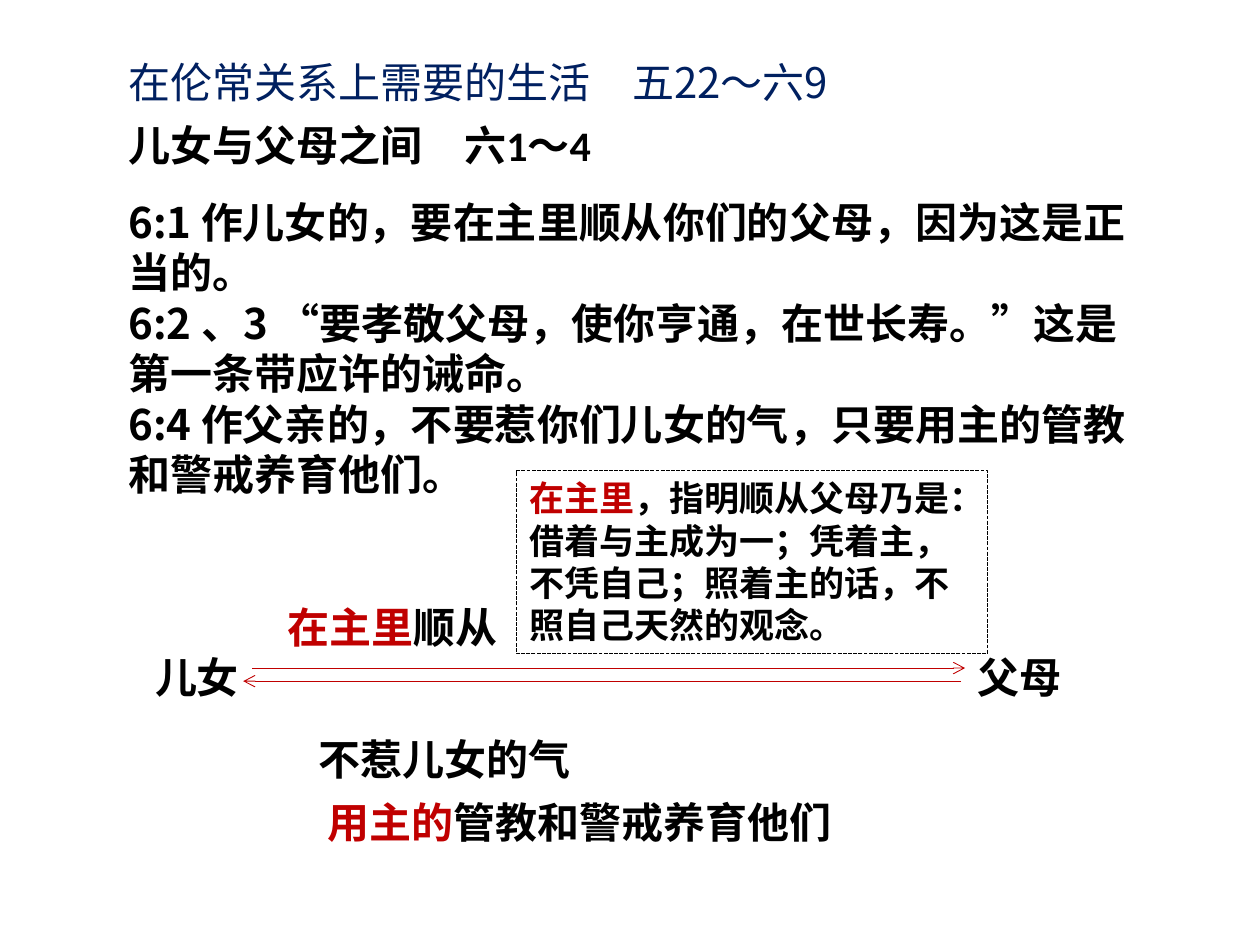
import pptx
import pptx.util
import pptx.dml.color
import pptx.enum.dml
import pptx.enum.shapes
import pptx.enum.text
import pptx.oxml.ns
from lxml import etree

Pt = pptx.util.Pt
qn = pptx.oxml.ns.qn
NAVY = pptx.dml.color.RGBColor(0x00, 0x20, 0x60)
BLACK = pptx.dml.color.RGBColor(0x00, 0x00, 0x00)
RED = pptx.dml.color.RGBColor(0xC0, 0x00, 0x00)
CJK = "Noto Sans CJK SC"


class LessonSlide:
    """Holds the text style and the slide being built."""

    def __init__(self, slide):
        self.slide = slide
        self.style = {"size": Pt(24), "bold": True, "name": CJK}

    def fill_text(self, frame, paragraphs, wrap=True, **changes):
        """Each paragraph is a list of (text, colour) runs."""
        layout = {
            "word_wrap": wrap,
            "auto_size": pptx.enum.text.MSO_AUTO_SIZE.SHAPE_TO_FIT_TEXT,
        }
        for attribute, value in layout.items():
            setattr(frame, attribute, value)
        for index, runs in enumerate(paragraphs):
            line = frame.add_paragraph() if index else frame.paragraphs[0]
            line.alignment = pptx.enum.text.PP_ALIGN.LEFT
            for words, colour in runs:
                run = line.add_run()
                run.text = words
                run.font.color.rgb = colour
                for attribute, value in {**self.style, **changes}.items():
                    setattr(run.font, attribute, value)
                east_asian = etree.SubElement(run.font._element, qn("a:ea"))
                east_asian.set("typeface", CJK)

    def text(self, left, top, width, height, paragraphs, wrap=True, **changes):
        box = self.slide.shapes.add_textbox(Pt(left), Pt(top), Pt(width), Pt(height))
        self.fill_text(box.text_frame, paragraphs, wrap, **changes)

    def arrow(self, start, end, y):
        connector = self.slide.shapes.add_connector(
            pptx.enum.shapes.MSO_CONNECTOR.STRAIGHT, Pt(start), Pt(y), Pt(end), Pt(y))
        connector.line.color.rgb = RED
        connector.line.width = Pt(0.5)
        etree.SubElement(connector.line._get_or_add_ln(), qn("a:tailEnd")).set("type", "arrow")
        etree.SubElement(connector._element.spPr, qn("a:effectLst"))

    def dashed_box(self, left, top, width, height, paragraphs, **changes):
        box = self.slide.shapes.add_shape(
            pptx.enum.shapes.MSO_SHAPE.RECTANGLE, Pt(left), Pt(top), Pt(width), Pt(height))
        box.shadow.inherit = False
        box.fill.background()
        box.line.color.rgb = BLACK
        outline = {"width": Pt(0.75), "dash_style": pptx.enum.dml.MSO_LINE.SQUARE_DOT}
        for attribute, value in outline.items():
            setattr(box.line, attribute, value)
        box.text_frame.vertical_anchor = pptx.enum.text.MSO_ANCHOR.TOP
        self.fill_text(box.text_frame, paragraphs, **changes)


def main():
    deck = pptx.Presentation()
    deck.slide_width, deck.slide_height = Pt(720), Pt(540)
    lesson = LessonSlide(deck.slides.add_slide(deck.slide_layouts[6]))
    margin, row = 66.25, 36

    # Headings
    lesson.text(margin, 29, 508, row, [[("在伦常关系上需要的生活　五22～六9", NAVY)]], bold=False)
    lesson.text(margin, 65, 409, row, [[("儿女与父母之间　六1～4", BLACK)]], name="Calibri")

    # Verses
    verses = [
        "6:1 作儿女的，要在主里顺从你们的父母，因为这是正当的。",
        "6:2 、3 “要孝敬父母，使你亨通，在世长寿。”这是第一条带应许的诫命。",
        "6:4 作父亲的，不要惹你们儿女的气，只要用主的管教和警戒养育他们。",
    ]
    lesson.text(margin, 108.75, 587, 181.5, [[(verse, BLACK)] for verse in verses])

    # Children and parents, with the duty of each side
    diagram_labels = [
        (81.5, 368.5, 62.5, [("儿女", BLACK)]),
        (551.5, 368.5, 62.5, [("父母", BLACK)]),
        (157, 340, 134.5, [("在主里", RED), ("顺从", BLACK)]),
        (175, 415.5, 159, [("不惹儿女的气", BLACK)]),
        (180, 451.5, 304, [("用主的", RED), ("管教和警戒养育他们", BLACK)]),
    ]
    for left, top, width, runs in diagram_labels:
        lesson.text(left, top, width, row, [runs], wrap=False)
    lesson.arrow(144, 551.5, 381.75)
    lesson.arrow(549.25, 139, 389.25)

    # Explanation of "in the Lord"
    explanation = "，指明顺从父母乃是：借着与主成为一；凭着主，不凭自己；照着主的话，不照自己天然的观念。"
    lesson.dashed_box(295.25, 269, 269, 104.5,
                      [[("在主里", RED), (explanation, BLACK)]], size=Pt(20))

    deck.save("out.pptx")


if __name__ == "__main__":
    main()
